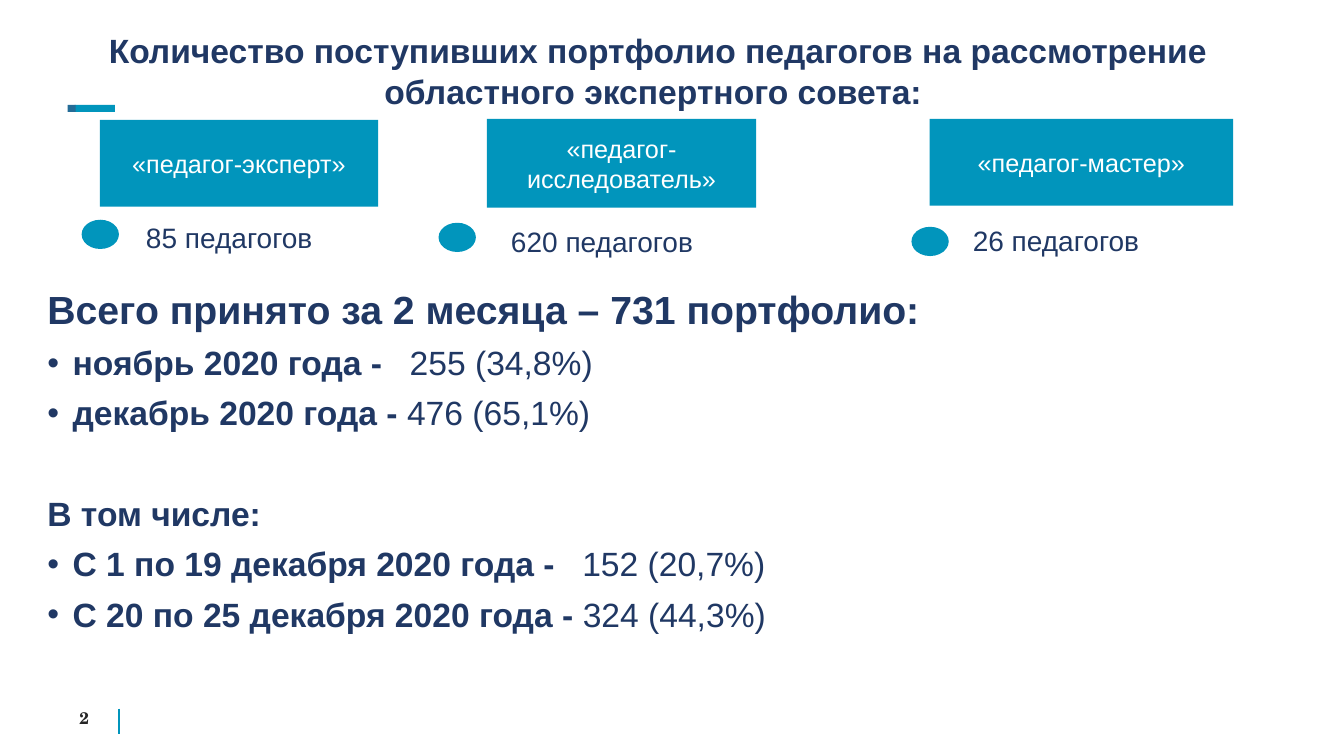
import pptx
import pptx.dml.color
import pptx.enum.shapes
import pptx.enum.text
import pptx.oxml.ns
import pptx.util
from lxml import etree

Inches = pptx.util.Inches
Pt = pptx.util.Pt
Shape = pptx.enum.shapes.MSO_SHAPE
Align = pptx.enum.text.PP_ALIGN
Anchor = pptx.enum.text.MSO_ANCHOR
qn = pptx.oxml.ns.qn

COLORS = {
    "teal": "0195BC",
    "blue": "246C97",
    "navy": "203864",
    "dark": "262626",
    "white": "FFFFFF",
}


class SlideBuilder:
    def __init__(self, slide, font="Arial"):
        self.slide = slide
        self.font = font

    def color(self, name):
        return pptx.dml.color.RGBColor.from_string(COLORS[name])

    def add_run(self, paragraph, text, size, color="navy", bold=False, font=None):
        run = paragraph.add_run()
        run.text = text
        run.font.size = Pt(size)
        run.font.name = font or self.font
        run.font.bold = bold
        run.font.color.rgb = self.color(color)
        return run

    def add_block(self, kind, left, top, width, height, fill="teal"):
        shape = self.slide.shapes.add_shape(
            kind, Inches(left), Inches(top), Inches(width), Inches(height))
        shape.shadow.inherit = False
        shape.fill.solid()
        shape.fill.fore_color.rgb = self.color(fill)
        shape.line.fill.background()
        return shape

    def add_label_block(self, text, left, top, width, height):
        frame = self.add_block(Shape.RECTANGLE, left, top, width, height).text_frame
        frame.word_wrap = True
        frame.vertical_anchor = Anchor.MIDDLE
        frame.paragraphs[0].alignment = Align.CENTER
        self.add_run(frame.paragraphs[0], text, 18, "white")

    def add_frame(self, left, top, width, height, inset=True):
        box = self.slide.shapes.add_textbox(
            Inches(left), Inches(top), Inches(width), Inches(height))
        frame = box.text_frame
        frame.word_wrap = True
        if not inset:
            frame.margin_left = frame.margin_right = 0
            frame.margin_top = frame.margin_bottom = 0
        return frame

    def add_text(self, text, left, top, width, height, size, align=Align.LEFT,
                 inset=True, anchor=Anchor.TOP, **style):
        frame = self.add_frame(left, top, width, height, inset)
        frame.vertical_anchor = anchor
        frame.paragraphs[0].alignment = align
        self.add_run(frame.paragraphs[0], text, size, **style)

    def add_summary(self, lines, left, top, width, height):
        frame = self.add_frame(left, top, width, height, inset=False)
        for index, (label, value, size, before, gap) in enumerate(lines):
            paragraph = frame.add_paragraph() if index else frame.paragraphs[0]
            paragraph.line_spacing = 0.9
            paragraph.space_before = Pt(before)
            self.add_run(paragraph, label, size, bold=True)
            if value:
                self.add_bullet(paragraph)
                space = self.add_run(paragraph, " ", size, bold=True)
                space.font._element.set("spc", str(gap * 100))
                self.add_run(paragraph, value, size)

    def add_bullet(self, paragraph):
        properties = paragraph._p.get_or_add_pPr()
        properties.set("marL", str(Inches(0.25)))
        properties.set("indent", str(Inches(-0.25)))
        font = etree.SubElement(properties, qn("a:buFont"))
        font.set("typeface", self.font)
        bullet = etree.SubElement(properties, qn("a:buChar"))
        bullet.set("char", "•")

    def add_line(self, x1, y1, x2, y2):
        line = self.slide.shapes.add_connector(
            pptx.enum.shapes.MSO_CONNECTOR.STRAIGHT,
            Inches(x1), Inches(y1), Inches(x2), Inches(y2))
        line.line.color.rgb = self.color("teal")
        line.line.width = Pt(1)
        etree.SubElement(line._element.spPr, qn("a:effectLst"))


def main():
    presentation = pptx.Presentation()
    presentation.slide_width = Inches(13.33)
    presentation.slide_height = Inches(7.5)
    builder = SlideBuilder(presentation.slides.add_slide(presentation.slide_layouts[6]))

    builder.add_line(1.18, 7.03, 1.18, 7.28)
    builder.add_block(Shape.RECTANGLE, 0.74, 1.04, 0.4, 0.07)
    builder.add_block(Shape.RECTANGLE, 0.67, 1.04, 0.08, 0.07, "blue")
    builder.add_text("2", 0.64, 7.01, 0.39, 0.22, 12, Align.CENTER, inset=False,
                     anchor=Anchor.MIDDLE, color="dark", bold=True,
                     font="TeX Gyre Schola")

    categories = [
        ("«педагог-эксперт»", (0.99, 1.19, 2.76, 0.86),
         "85 педагогов", (1.35, 2.14), (0.81, 2.18)),
        ("«педагог-исследователь»", (4.83, 1.18, 2.67, 0.88),
         "620 педагогов", (4.97, 2.18), (4.35, 2.21)),
        ("«педагог-мастер»", (9.22, 1.18, 3.01, 0.86),
         "26 педагогов", (9.55, 2.17), (9.04, 2.25)),
    ]
    for name, block, count, count_place, dot_place in categories:
        builder.add_label_block(name, *block)
        builder.add_text(count, *count_place, 2.4, 0.44, 20)
        builder.add_block(Shape.OVAL, *dot_place, 0.37, 0.29)

    builder.add_summary([
        ("Всего принято за 2 месяца – 731 портфолио:", "", 28, 10, 0),
        ("ноябрь 2020 года -", "255 (34,8%)", 24, 10, 13),
        ("декабрь 2020 года -", "476 (65,1%)", 24, 10, 0),
        ("В том числе:", "", 24, 46, 0),
        ("С 1 по 19 декабря 2020 года -", "152 (20,7%)", 24, 10, 13),
        ("С 20 по 25 декабря 2020 года -", "324 (44,3%)", 24, 10, 0),
    ], 0.47, 2.88, 12.18, 3.87)

    builder.add_text(
        "Количество поступивших портфолио педагогов на рассмотрение "
        "областного экспертного совета: ",
        0.81, 0.25, 11.43, 0.91, 24, Align.CENTER, bold=True)

    presentation.save("out.pptx")


if __name__ == "__main__":
    main()
